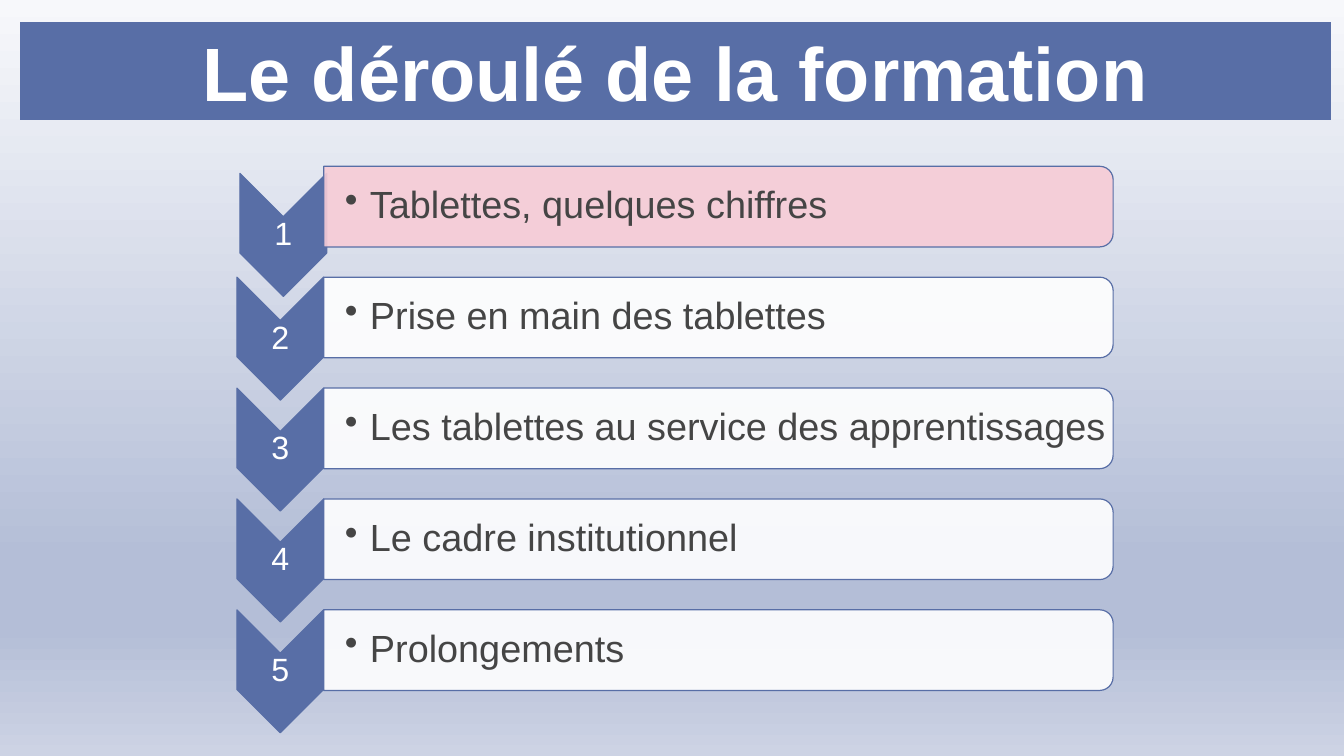
import pptx
import pptx.dml.color
import pptx.enum.shapes
import pptx.enum.text
import pptx.oxml
import pptx.oxml.ns
import pptx.util
from lxml import etree

Inches = pptx.util.Inches
RGBColor = pptx.dml.color.RGBColor
PresetShape = pptx.enum.shapes.MSO_SHAPE
Align = pptx.enum.text.PP_ALIGN
qn = pptx.oxml.ns.qn

BLUE = RGBColor(0x58, 0x6E, 0xA6)
PINK = RGBColor(0xF7, 0xCC, 0xD6)
WHITE = RGBColor(0xFF, 0xFF, 0xFF)
GREY = RGBColor(0x45, 0x45, 0x45)
SKY = [(0, RGBColor(0xF7, 0xF8, 0xFB)), (74, RGBColor(0xB4, 0xBE, 0xD7)),
       (83, RGBColor(0xB4, 0xBE, 0xD7)), (100, RGBColor(0xCD, 0xD3, 0xE4))]

STEPS = ["Tablettes, quelques chiffres", "Prise en main des tablettes",
         "Les tablettes au service des apprentissages",
         "Le cadre institutionnel", "Prolongements"]
CURRENT_STEP = 0
ROW_PITCH = 1.1
CHEVRON_WIDTH, CHEVRON_HEIGHT = 0.86, 1.22
BAR_HEIGHT = 0.8
INSET = 0.02


def apply_format(target, values):
    for name, value in values.items():
        setattr(target, name, value)


def write_text(shape, text, size, color, align, bold=False):
    para = shape.text_frame.paragraphs[0]
    para.alignment = align
    span = para.add_run()
    span.text = text
    apply_format(span.font, {"name": "Arial", "size": pptx.util.Pt(size), "bold": bold})
    span.font.color.rgb = color
    return para


def paint_background(page):
    fill = page.background.fill
    fill.gradient()
    fill.gradient_angle = 270
    stops = page.element.find(".//" + qn("a:gsLst"))
    for stop in list(stops):
        stops.remove(stop)
    for percent, color in SKY:
        stop = etree.SubElement(stops, qn("a:gs"), pos=str(percent * 1000))
        etree.SubElement(stop, qn("a:srgbClr"), val=str(color))


def add_title(page, left, top, width, height):
    title = page.shapes.title
    apply_format(title, {"left": Inches(left), "top": Inches(top),
                         "width": Inches(width), "height": Inches(height)})
    title.fill.solid()
    title.fill.fore_color.rgb = BLUE
    apply_format(title.text_frame, {
        "word_wrap": True, "auto_size": pptx.enum.text.MSO_AUTO_SIZE.NONE,
        "vertical_anchor": pptx.enum.text.MSO_ANCHOR.MIDDLE})
    write_text(title, "Le déroulé de la formation", 54, WHITE, Align.CENTER, bold=True)


def add_turned_shape(page, preset, left, top, width, height, color):
    """Place a shape turned a quarter clockwise so that it fills the given box."""
    shape = page.shapes.add_shape(
        preset, Inches(left + (width - height) / 2), Inches(top + (height - width) / 2),
        Inches(height), Inches(width))
    shape.rotation = 90
    shape.shadow.inherit = False
    shape.fill.solid()
    shape.fill.fore_color.rgb = color
    shape.line.color.rgb = BLUE
    shape.line.width = pptx.util.Pt(0.85)
    return shape


def add_label(page, left, top, width, height, text, size, color, align, indent=INSET):
    box = page.shapes.add_textbox(Inches(left), Inches(top), Inches(width), Inches(height))
    apply_format(box.text_frame, {
        "word_wrap": True, "vertical_anchor": pptx.enum.text.MSO_ANCHOR.MIDDLE,
        "margin_left": Inches(indent), "margin_right": Inches(INSET),
        "margin_top": Inches(INSET), "margin_bottom": Inches(INSET)})
    para = write_text(box, text, size, color, align)
    para.line_spacing = 0.9
    return para


def add_bullet(para):
    settings = para._p.get_or_add_pPr()
    settings.set("marL", str(Inches(0.25)))
    settings.set("indent", str(-Inches(0.25)))
    etree.SubElement(settings, qn("a:buChar"), char="•")


def add_step(page, left, top, width, number, text, current):
    # Numbered chevron; the current step's one sits slightly off the column
    shift_x, shift_y = (0.03, 0.07) if current else (0, 0)
    chevron_left, chevron_top = left + shift_x, top + shift_y
    add_turned_shape(page, PresetShape.CHEVRON, chevron_left, chevron_top,
                     CHEVRON_WIDTH, CHEVRON_HEIGHT, BLUE)
    add_label(page, chevron_left, chevron_top + CHEVRON_HEIGHT * 0.35, CHEVRON_WIDTH,
              CHEVRON_HEIGHT * 0.3, str(number), 23, WHITE, Align.CENTER)

    # Bar with its bulleted heading
    bar_left, bar_width = left + CHEVRON_WIDTH, width - CHEVRON_WIDTH
    bar = add_turned_shape(page, PresetShape.ROUND_2_SAME_RECTANGLE, bar_left, top,
                           bar_width, BAR_HEIGHT, PINK if current else WHITE)
    color = bar.element.spPr.find(qn("a:solidFill"))[0]
    etree.SubElement(color, qn("a:alpha"), val="90000")
    add_bullet(add_label(page, bar_left, top + 0.04, bar_width - 0.03, BAR_HEIGHT - 0.08,
                         text, 27, GREY, Align.LEFT, indent=0.21))


def add_steps(page, left, top, width):
    for row, text in enumerate(STEPS):
        add_step(page, left, top + row * ROW_PITCH, width, row + 1, text,
                 row == CURRENT_STEP)


def main():
    deck = pptx.Presentation()
    deck.slide_width, deck.slide_height = Inches(13.33), Inches(7.5)
    page = deck.slides.add_slide(deck.slide_layouts.get_by_name("Title Only"))
    paint_background(page)
    add_title(page, 0.2, 0.22, 13, 0.97)
    add_steps(page, 2.35, 1.65, 8.69)
    deck.save("out.pptx")


if __name__ == "__main__":
    main()
